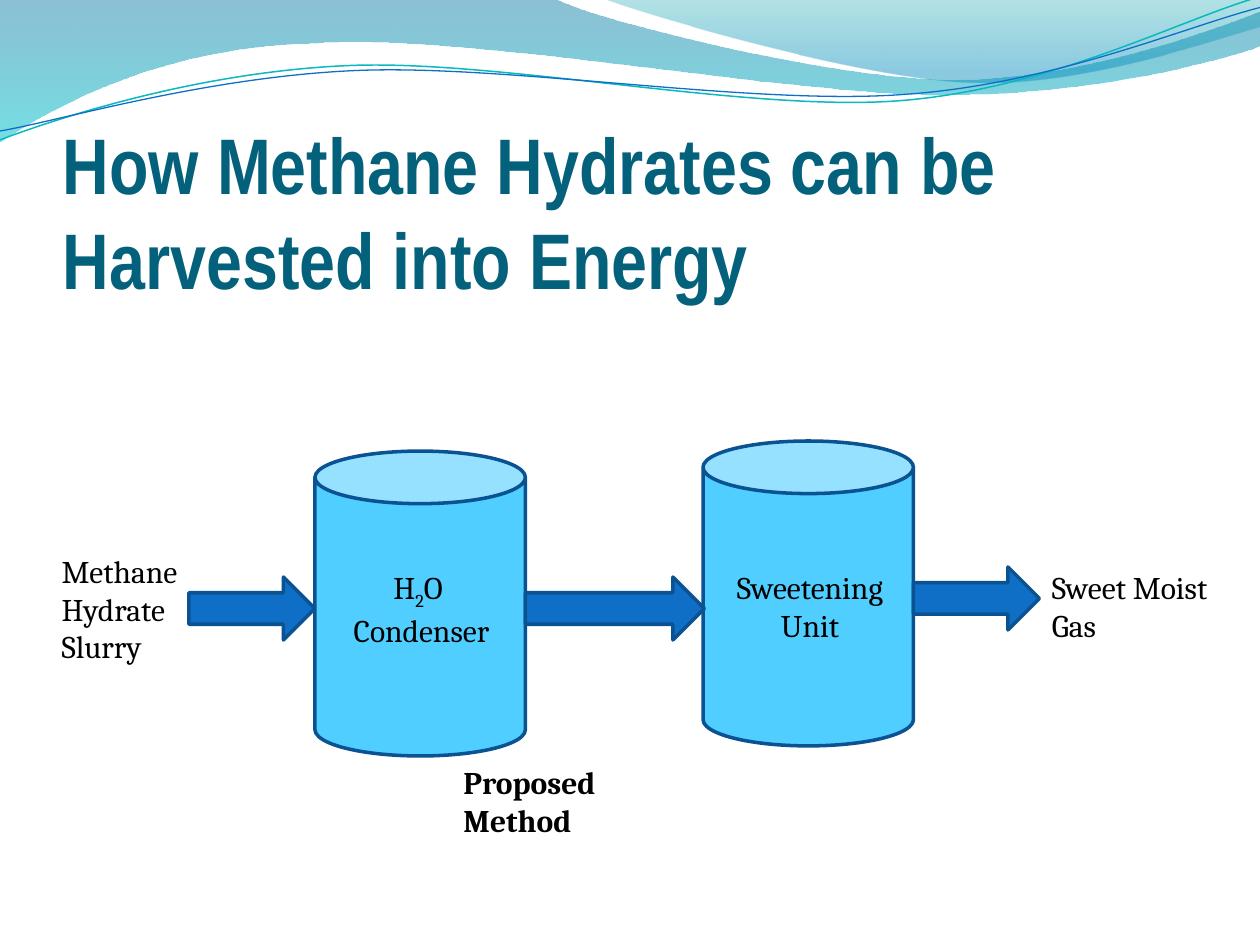
import math

import pptx
import pptx.dml.color
import pptx.enum.shapes
import pptx.enum.text
import pptx.oxml
import pptx.oxml.ns
import pptx.util
from pptx.util import Inches

MSO = pptx.enum.shapes.MSO_SHAPE
ALIGN = pptx.enum.text.PP_ALIGN
qn = pptx.oxml.ns.qn
WAVE_TILT = -2.7

SWEEP_LEFT = [(0, 0), (4.4, -0.01),
              (4.76, 0.17, 6.64, 0.63, 7.58, 0.63), (8.53, 0.63, 9.58, 0.26, 10, 0.09),
              (10.01, 0.36),
              (9.83, 0.44, 8.7, 0.76, 7.46, 0.75), (6.22, 0.75, 3.82, 0.28, 2.57, 0.34),
              (1.29, 0.36, 0.46, 0.83, -0.01, 1.13), (0, 0)]
SWEEP_RIGHT = [(4.79, -0.01), (5.09, 0.11, 6.82, 0.62, 7.69, 0.65),
               (8.56, 0.69, 9.61, 0.32, 10, 0.21), (10, 0), (4.79, -0.01)]
TEAL_WAVE = [(0, 1.11), (0.48, 0.93, 1.58, 0.57, 2.77, 0.52),
             (3.95, 0.47, 5.93, 0.89, 7.13, 0.8), (8.33, 0.71, 9.38, 0.15, 9.98, -0.02)]
BLUE_WAVE = [(0, 1.04), (0.47, 0.96, 1.64, 0.61, 2.83, 0.56),
             (4.03, 0.51, 5.97, 0.84, 7.17, 0.75), (8.36, 0.67, 9.41, 0.21, 10, 0.06)]


def rgb(value):
    """Turn a hex string into a colour."""
    return pptx.dml.color.RGBColor.from_string(value)


def turn(segments, center, degrees):
    """Rotate every point of the segments clockwise about a center."""
    cx, cy = center
    c, d = math.cos(math.radians(degrees)), math.sin(math.radians(degrees))
    return [tuple(v for x, y in zip(seg[::2], seg[1::2])
                  for v in (cx + (x - cx) * c - (y - cy) * d,
                            cy + (x - cx) * d + (y - cy) * c))
            for seg in segments]


def add_outline(s, origin, segments, closed):
    """Draw a freeform of lines and cubic curves measured from the origin."""
    left, top = origin
    points = [(Inches(left + x), Inches(top + y))
              for seg in segments for x, y in zip(seg[::2], seg[1::2])]
    builder = s.shapes.build_freeform(*points[0], scale=1.0)
    builder.add_line_segments(points[1:], close=closed)
    sp = builder.convert_to_shape()
    sp.shadow.inherit = False
    steps = iter(list(sp._element.iter(qn("a:lnTo"))))
    for seg in segments[1:]:
        first = next(steps)
        if len(seg) == 6:
            first.tag = qn("a:cubicBezTo")
            for _ in range(2):
                step = next(steps)
                first.append(step[0])
                step.getparent().remove(step)
    return sp


def add_sweep(s, origin, segments, stops):
    """Draw a band filled with a translucent downward gradient."""
    sp = add_outline(s, origin, segments, True)
    sp.line.fill.background()
    sp.fill.gradient()
    sp.fill.gradient_angle = 270
    for stop, (position, color, _) in zip(sp.fill.gradient_stops, stops):
        stop.position = position
        stop.color.rgb = rgb(color)
    colors = sp._element.spPr.iter(qn("a:srgbClr"))
    for node, (_, _, opacity) in zip(colors, stops):
        alpha = pptx.oxml.parse_xml(
            f'<a:alpha {pptx.oxml.ns.nsdecls("a")} val="{opacity * 1000}"/>')
        node.append(alpha)


def add_wave(s, origin, segments, center, color, width):
    """Draw a thin tilted wave line."""
    sp = add_outline(s, origin, turn(segments, center, -WAVE_TILT), False)
    sp.rotation = WAVE_TILT
    sp.fill.background()
    sp.line.color.rgb = rgb(color)
    sp.line.width = pptx.util.Pt(width)


def add_header(s, box):
    """Place the sweeps and waves along the top of the slide."""
    origin = box[:2]
    add_sweep(s, origin, SWEEP_LEFT, [(0, "0074A1", 45), (1, "00C6CF", 55)])
    add_sweep(s, origin, SWEEP_RIGHT, [(0, "00A1A9", 30), (0.8, "008BBF", 45)])
    add_wave(s, origin, TEAL_WAVE, (4.99, 0.57), "0AB8BF", 0.85)
    add_wave(s, origin, BLUE_WAVE, (5, 0.59), "0F6FC6", 0.75)


def style_run(r, size=18, font="Cambria", color="000000", bold=False):
    """Set the font of one run."""
    r.font.size = pptx.util.Pt(size)
    r.font.name = font
    r.font.bold = bold
    r.font.color.rgb = rgb(color)


def add_text(s, box, lines, wrap=False, **style):
    """Place a text box with one paragraph for each line."""
    tf = s.shapes.add_textbox(*map(Inches, box)).text_frame
    tf.word_wrap = wrap
    tf.text = "\n".join(lines)
    for p in tf.paragraphs:
        for r in p.runs:
            style_run(r, **style)
    return tf


def add_title(s, box):
    """Place the slide title at the bottom of its box."""
    tf = add_text(s, box, ["How Methane Hydrates can be Harvested into Energy"],
                  wrap=True, size=45, font="Arial Narrow", color="04617B", bold=True)
    tf.vertical_anchor = pptx.enum.text.MSO_ANCHOR.BOTTOM
    tf.margin_left = tf.margin_right = tf.margin_bottom = 0


def add_part(s, kind, box, fill):
    """Draw one outlined part of the process."""
    sp = s.shapes.add_shape(kind, *map(Inches, box))
    sp.shadow.inherit = False
    sp.fill.solid()
    sp.fill.fore_color.rgb = rgb(fill)
    sp.line.color.rgb = rgb("0B5292")
    sp.line.width = pptx.util.Pt(2)


def add_label(s, box, lines, **style):
    """Place a process label whose box grows with its text."""
    tf = add_text(s, box, lines, **style)
    tf.auto_size = pptx.enum.text.MSO_AUTO_SIZE.SHAPE_TO_FIT_TEXT
    return tf.paragraphs


def add_process(s, box):
    """Draw the tanks, flow arrows and labels within the box."""
    x, y = box[:2]
    for left, top in ((2.11, 0.08), (5.19, 0)):
        add_part(s, MSO.CAN, (x + left, y + top, 1.67, 2.42), "4FCEFF")
    for left, top, width in ((1.11, 1.08, 1), (3.78, 1.08, 1.42), (6.86, 1, 1)):
        add_part(s, MSO.RIGHT_ARROW, (x + left, y + top, width, 0.5), "0F6FC6")

    add_label(s, (x, y + 0.83, 1.2, 1.01), ["Methane", "Hydrate", "Slurry"])
    formula, name = add_label(s, (x + 2.3, y + 0.96, 1.31, 0.71), ["H", "Condenser"])
    formula.alignment = name.alignment = ALIGN.CENTER
    for text in ("2", "O "):
        r = formula.add_run()
        r.text = text
        style_run(r)
    formula.runs[1].font._element.set("baseline", "-25000")
    unit = add_label(s, (x + 5.36, y + 0.96, 1.45, 0.71), ["Sweetening", "Unit"])[1]
    unit.alignment = ALIGN.CENTER
    add_label(s, (x + 7.86, y + 0.96, 1.47, 0.71), ["Sweet Moist", "Gas"])
    add_label(s, (x + 3.19, y + 2.51, 2.09, 0.4), ["Proposed Method"],
              wrap=True, bold=True)


def main():
    """Build and save the slide."""
    prs = pptx.Presentation()
    prs.slide_width, prs.slide_height = Inches(10), Inches(7.5)
    s = prs.slides.add_slide(prs.slide_layouts[6])
    add_header(s, (0, 0, 10, 1.13))
    add_title(s, (0.5, 1.17, 9, 1.25))
    add_process(s, (0.39, 3.5, 9.33, 2.91))
    prs.save("out.pptx")


if __name__ == "__main__":
    main()
